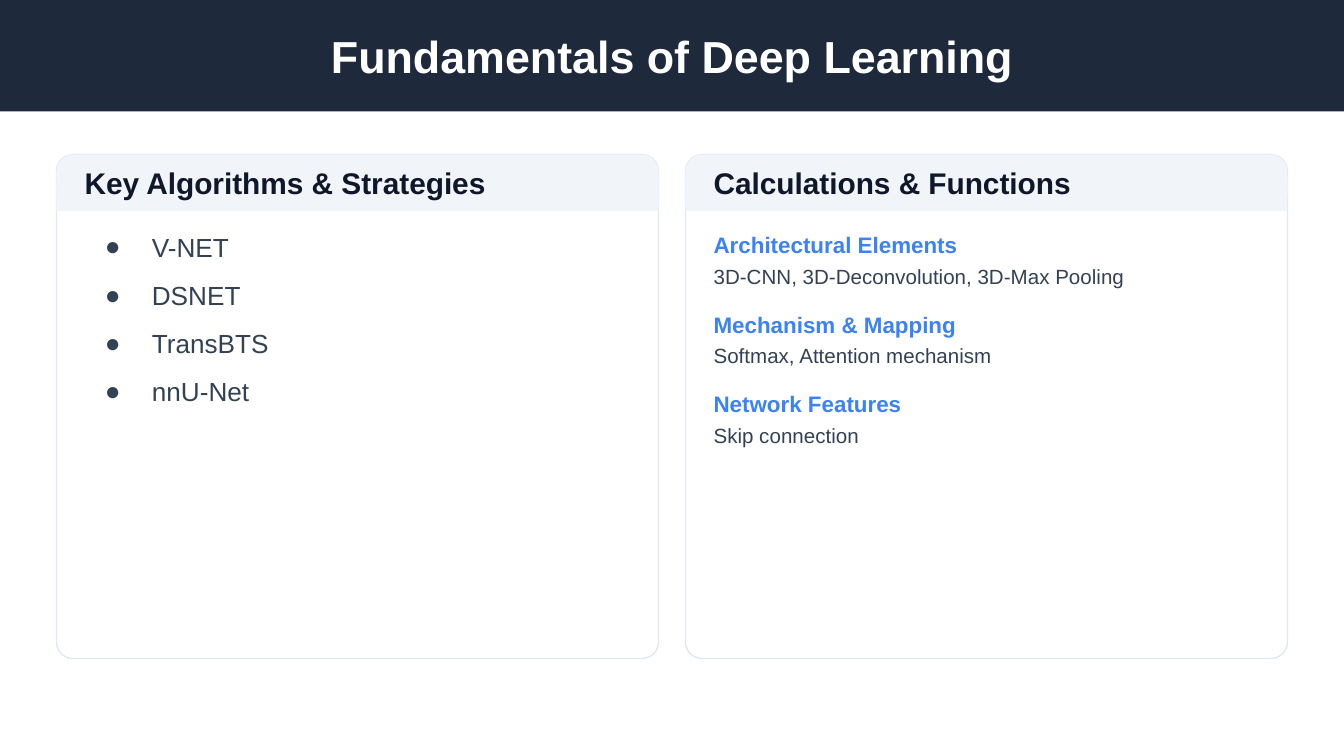
from lxml.etree import SubElement
from pptx import Presentation
from pptx.dml.color import RGBColor
from pptx.enum.shapes import MSO_SHAPE
from pptx.enum.text import MSO_ANCHOR, PP_ALIGN
from pptx.oxml.ns import qn
from pptx.util import Inches, Pt

NAVY, INK, SLATE = "1E293B", "0F172A", "334155"
BLUE, MIST, EDGE, WHITE = "3B82F6", "F1F5F9", "E2E8F0", "FFFFFF"


def color(code):
    return RGBColor.from_string(code)


class Deck:
    font = "Arial"

    def __init__(self, wide, high):
        self.prs = Presentation()
        self.prs.slide_width, self.prs.slide_height = Inches(wide), Inches(high)
        self.slide = self.prs.slides.add_slide(self.prs.slide_layouts[6])
        self.shapes = self.slide.shapes

    def group(self):
        """Place the next elements in a new group."""
        self.shapes = self.slide.shapes.add_group_shape().shapes

    def box(self, at, fill, line=None, round=None):
        kind = MSO_SHAPE.ROUNDED_RECTANGLE if round else MSO_SHAPE.RECTANGLE
        shape = self.shapes.add_shape(kind, *map(Inches, at))
        shape.shadow.inherit = False
        shape.fill.solid()
        shape.fill.fore_color.rgb = color(fill)
        if round:
            shape.adjustments[0] = round
        if line:
            shape.line.color.rgb = color(line)
            shape.line.width = Pt(0.75)
        else:
            shape.line.fill.background()

    def frame(self, at, anchor=MSO_ANCHOR.TOP):
        frame = self.shapes.add_textbox(*map(Inches, at)).text_frame
        frame.word_wrap = True
        frame.vertical_anchor = anchor
        frame.margin_left = frame.margin_right = 0
        frame.margin_top = frame.margin_bottom = 0
        return frame

    def style(self, para, size, tint, bold=False, before=0):
        para.space_before = Pt(before)
        for run in para.runs:
            run.font.name = self.font
            run.font.size = Pt(size)
            run.font.bold = bold
            run.font.color.rgb = color(tint)

    def title(self, at, text, size, tint, align=PP_ALIGN.LEFT):
        frame = self.frame(at, MSO_ANCHOR.MIDDLE)
        frame.text = text
        frame.paragraphs[0].alignment = align
        self.style(frame.paragraphs[0], size, tint, bold=True)

    def bullets(self, at, items):
        frame = self.frame(at)
        frame.text = "\n".join(items)
        for i, para in enumerate(frame.paragraphs):
            self.style(para, 14, SLATE, before=9 if i else 0)
            props = para._p.get_or_add_pPr()
            props.set("marL", str(Inches(0.5)))
            props.set("indent", str(Inches(-0.35)))
            tint = SubElement(props, qn("a:buClr"))
            SubElement(tint, qn("a:srgbClr"), val=SLATE)
            SubElement(props, qn("a:buFont"), typeface=self.font)
            SubElement(props, qn("a:buChar"), char="●")

    def topics(self, at, pairs):
        frame = self.frame(at)
        frame.text = "\n".join(line for pair in pairs for line in pair)
        for i, para in enumerate(frame.paragraphs):
            if i % 2:
                self.style(para, 11, SLATE, before=3)
            else:
                self.style(para, 12, BLUE, bold=True, before=12 if i else 0)

    def card(self, left, head):
        """Draw a card with its heading and return the area for its body."""
        top, wide, band = 1.15, 4.48, 0.42
        inner, width = left + 0.21, 4.06
        self.group()
        self.box((left, top, wide, 3.75), WHITE, EDGE, round=0.033)
        self.box((left, top, wide, band), MIST, round=0.3)
        self.box((left, top + band / 2, wide, band / 2), MIST)
        self.title((inner, top, width, band), head, 16, INK)
        return inner, 1.72, width, 2.92


def main():
    wide = 10
    deck = Deck(wide, wide * 9 / 16)

    # Title bar
    deck.box((0, 0, wide, 0.83), NAVY)
    deck.title((1.25, 0, 7.5, 0.83), "Fundamentals of Deep Learning",
               24, WHITE, PP_ALIGN.CENTER)

    # Left card
    body = deck.card(0.42, "Key Algorithms & Strategies")
    deck.bullets(body, ["V-NET", "DSNET", "TransBTS", "nnU-Net"])

    # Right card
    body = deck.card(5.1, "Calculations & Functions")
    deck.topics(body, [
        ("Architectural Elements", "3D-CNN, 3D-Deconvolution, 3D-Max Pooling"),
        ("Mechanism & Mapping", "Softmax, Attention mechanism"),
        ("Network Features", "Skip connection"),
    ])

    deck.prs.save("out.pptx")


if __name__ == "__main__":
    main()
